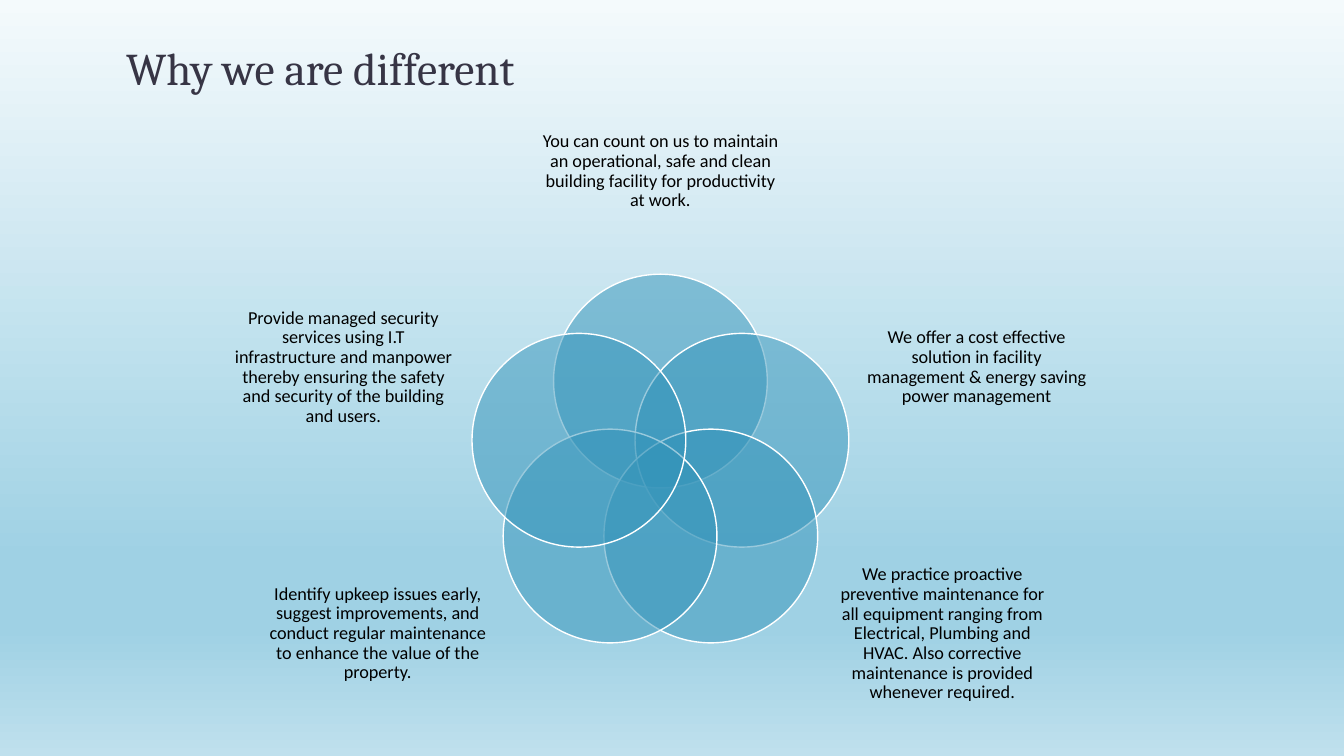
from copy import deepcopy
from math import cos, radians, sin

from pptx import Presentation
from pptx.dml.color import RGBColor
from pptx.enum.shapes import MSO_SHAPE
from pptx.enum.text import MSO_ANCHOR, MSO_AUTO_SIZE, PP_ALIGN
from pptx.oxml.ns import qn
from pptx.util import Inches, Pt

OVAL = MSO_SHAPE.OVAL
LEFT, CENTER = PP_ALIGN.LEFT, PP_ALIGN.CENTER
MIDDLE, BOTTOM = MSO_ANCHOR.MIDDLE, MSO_ANCHOR.BOTTOM

BLACK = RGBColor(0x00, 0x00, 0x00)
WHITE = RGBColor(0xFF, 0xFF, 0xFF)
INK = RGBColor(0x37, 0x35, 0x45)
PETAL_BLUE = RGBColor(0x34, 0x94, 0xBA)
SKY = [
    (0, RGBColor(0xF4, 0xFA, 0xFC)),
    (0.74, RGBColor(0x9F, 0xD1, 0xE4)),
    (0.83, RGBColor(0x9F, 0xD1, 0xE4)),
    (1, RGBColor(0xBF, 0xE0, 0xED)),
]

# Flower of circles: centre, ring radius and diameter in inches
CENTER_X, CENTER_Y, RING, DIAMETER = 6.55, 4.63, 0.85, 2.12

# Reasons clockwise from the top: left, top, width, height, text
REASONS = [
    (5.32, 0.99, 2.46, 1.42, "You can count on us to maintain an operational, safe and clean "
     "building facility for productivity at work."),
    (8.58, 2.87, 2.21, 1.55, "We offer a cost effective solution in facility management & "
     "energy saving power management"),
    (8.27, 5.56, 2.15, 1.46, "We practice proactive preventive maintenance for all equipment "
     "ranging from Electrical, Plumbing and HVAC. Also corrective maintenance is provided "
     "whenever required."),
    (2.64, 5.51, 2.21, 1.55, "Identify upkeep issues early, suggest improvements, and conduct "
     "regular maintenance to enhance the value of the property."),
    (2.3, 2.87, 2.21, 1.55, "Provide managed security services using I.T infrastructure and "
     "manpower thereby ensuring the safety and security of the building and users."),
]


def write(frame, text, anchor, para_format, font_format, color):
    frame.text = text
    frame.word_wrap = True
    frame.auto_size = MSO_AUTO_SIZE.NONE
    frame.vertical_anchor = anchor
    para = frame.paragraphs[0]
    for name, value in para_format.items():
        setattr(para, name, value)
    font = para.runs[0].font
    for name, value in font_format.items():
        setattr(font, name, value)
    font.color.rgb = color


deck = Presentation()
deck.slide_width, deck.slide_height = Inches(13.33), Inches(7.5)
page = deck.slides.add_slide(deck.slide_layouts[5])

# Background gradient, running from top to bottom
sky = page.background.fill
sky.gradient()
sky.gradient_angle = 270
stop_list = page.element.find(".//" + qn("a:gsLst"))
while len(stop_list) < len(SKY):
    stop_list.append(deepcopy(stop_list[0]))
for stop, (position, color) in zip(sky.gradient_stops, SKY):
    stop.position = position
    stop.color.rgb = color

# Title
title = page.shapes.title
title.left, title.top, title.width, title.height = map(Inches, (1.15, 0.36, 4.57, 0.63))
write(title.text_frame, "Why we are different", BOTTOM,
      {"alignment": LEFT, "line_spacing": 0.8},
      {"name": "Cambria", "size": Pt(32.4)}, INK)

# Overlapping circles, each with its reason
for index, (left, top, width, height, reason) in enumerate(REASONS):
    angle = radians(index * 360 / len(REASONS))
    x = CENTER_X + RING * sin(angle) - DIAMETER / 2
    y = CENTER_Y - RING * cos(angle) - DIAMETER / 2
    petal = page.shapes.add_shape(OVAL, *map(Inches, (x, y, DIAMETER, DIAMETER)))
    petal.shadow.inherit = False
    petal.fill.solid()
    petal.fill.fore_color.rgb = PETAL_BLUE
    fill_color = petal.element.spPr.find(qn("a:solidFill"))[0]
    fill_color.append(fill_color.makeelement(qn("a:alpha"), {"val": "50000"}))
    petal.line.color.rgb = WHITE
    petal.line.width = Pt(1)

    box = page.shapes.add_textbox(*map(Inches, (left, top, width, height)))
    for side in ("left", "top", "right", "bottom"):
        setattr(box.text_frame, f"margin_{side}", 0)
    write(box.text_frame, reason, MIDDLE,
          {"alignment": CENTER, "line_spacing": 0.9},
          {"name": "Calibri", "size": Pt(13)}, BLACK)

deck.save("out.pptx")
